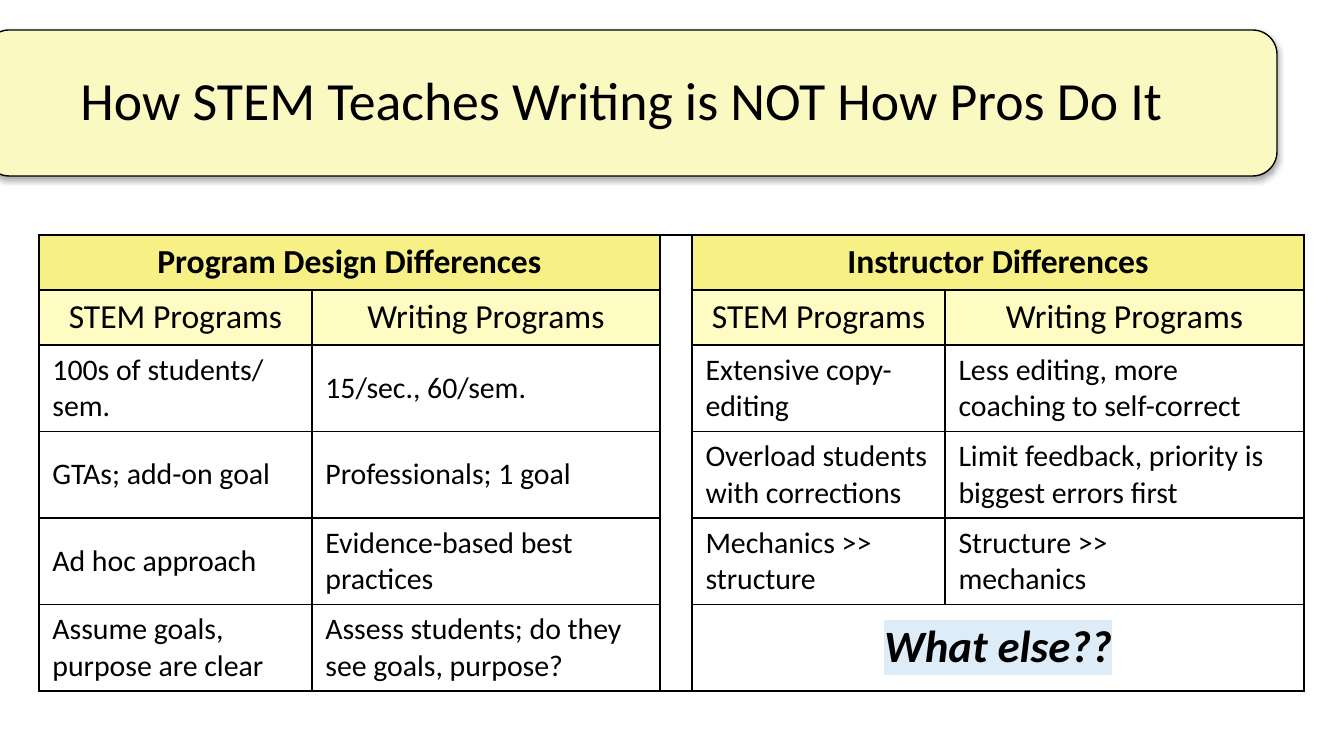
from lxml import etree
from pptx import Presentation
from pptx import util as u
from pptx.dml.color import RGBColor
from pptx.enum import shapes, text
from pptx.oxml.ns import qn

COLORS = {"ink": "000000", "banner": "FAF9C2", "group": "F7F085",
          "program": "FEFCC2", "highlight": "DEECF7"}
FONT = "Calibri"
COLUMNS = [273, 348, 32, 253, 359]
ROWS = [55, 55, 86, 86, 86, 86]
GAP = 2
PROGRAMS = ["STEM Programs", "Writing Programs"]
GROUPS = [
    (0, "Program Design Differences", [
        ("100s of students/ sem.", "15/sec., 60/sem."),
        ("GTAs; add-on goal", "Professionals; 1 goal"),
        ("Ad hoc approach", "Evidence-based best practices"),
        ("Assume goals, purpose are clear",
         "Assess students; do they see goals, purpose?")]),
    (3, "Instructor Differences", [
        ("Extensive copy-editing", "Less editing, more coaching to self-correct"),
        ("Overload students with corrections",
         "Limit feedback, priority is biggest errors first"),
        ("Mechanics >> structure", "Structure >>\nmechanics")]),
]


def px(length):
    """Turn pixels into EMU."""
    return u.Emu(round(length * 914400 / 134.4))


def color(name):
    """Look up a palette colour."""
    return RGBColor.from_string(COLORS[name])


def add_child(parent, tag, **attributes):
    """Append a DrawingML element."""
    child = etree.SubElement(parent, qn(tag))
    for key, value in attributes.items():
        child.set(key, str(value))
    return child


def style(para, size, bold=False, italic=False):
    """Set the font of a paragraph."""
    font = para.font
    font.name, font.size, font.bold, font.italic = FONT, u.Pt(size), bold, italic
    font.color.rgb = color("ink")


def add_shadow(shape):
    """Give a shape a soft shadow falling straight down."""
    shape.shadow.inherit = False
    effects = shape._element.spPr.find(qn("a:effectLst"))
    shadow = add_child(effects, "a:outerShdw", blurRad=u.Pt(3.1), dist=u.Pt(1.8),
                       dir=90 * 60000, algn="t", rotWithShape=0)
    tone = add_child(shadow, "a:srgbClr", val=COLORS["ink"])
    add_child(tone, "a:alpha", val=35000)


def add_header(page, left, top, width, height):
    """Place the banner with the title in front of it."""
    banner = page.shapes.add_shape(shapes.MSO_SHAPE.ROUNDED_RECTANGLE,
                                   px(left), px(top), px(width), px(height))
    banner.fill.solid()
    banner.fill.fore_color.rgb = color("banner")
    banner.line.color.rgb = color("ink")
    banner.line.width = u.Pt(0.75)
    add_shadow(banner)
    title = page.shapes.title
    title._element.addprevious(banner._element)
    title.left, title.top = px(left + 82), px(top - 4)
    title.width, title.height = px(width - 82), px(height)
    frame = title.text_frame
    frame.text = "How STEM Teaches Writing is NOT How Pros Do It"
    frame.vertical_anchor = text.MSO_ANCHOR.MIDDLE
    frame.auto_size = text.MSO_AUTO_SIZE.NONE
    frame.paragraphs[0].alignment = text.PP_ALIGN.LEFT
    style(frame.paragraphs[0], 28.8)


def add_borders(cell):
    """Draw a thin line on every side of a cell."""
    properties = cell._tc.get_or_add_tcPr()
    for place, side in enumerate("LRTB"):
        line = add_child(properties, f"a:ln{side}", w=u.Pt(1))
        add_child(add_child(line, "a:solidFill"), "a:srgbClr", val=COLORS["ink"])
        properties.insert(place, line)


def write_cell(cell, words, size=16, fill=None, centred=False, bold=False,
               italic=False):
    """Fill a cell with text and its background."""
    cell.text = words
    cell.vertical_anchor = text.MSO_ANCHOR.TOP if fill else text.MSO_ANCHOR.MIDDLE
    for para in cell.text_frame.paragraphs:
        para.alignment = text.PP_ALIGN.CENTER if centred else text.PP_ALIGN.LEFT
        style(para, size, bold, italic)
    if fill:
        cell.fill.solid()
        cell.fill.fore_color.rgb = color(fill)


def add_group(table, first, heading, rows):
    """Write a heading, its two programs and their contrasts."""
    table.cell(0, first).merge(table.cell(0, first + 1))
    write_cell(table.cell(0, first), heading, 18, "group", True, True)
    for offset, program in enumerate(PROGRAMS):
        write_cell(table.cell(1, first + offset), program, 18, "program", True)
        for number, contrast in enumerate(rows, 2):
            write_cell(table.cell(number, first + offset), contrast[offset])


def add_question(table, row, first):
    """Write the highlighted closing question across two columns."""
    cell = table.cell(row, first)
    cell.merge(table.cell(row, first + 1))
    write_cell(cell, "What else??", 24, centred=True, bold=True, italic=True)
    span = cell.text_frame.paragraphs[0].runs[0]
    mark = add_child(span._r.get_or_add_rPr(), "a:highlight")
    add_child(mark, "a:srgbClr", val=COLORS["highlight"])


def add_comparison(page, left, top):
    """Place the table that compares both kinds of program."""
    table = page.shapes.add_table(len(ROWS), len(COLUMNS), px(left), px(top),
                                  px(sum(COLUMNS)), px(sum(ROWS))).table
    table.first_row = table.horz_banding = False
    for column, width in zip(table.columns, COLUMNS):
        column.width = px(width)
    for row, height in zip(table.rows, ROWS):
        row.height = px(height)
    for cell in table.iter_cells():
        cell.fill.background()
    table.cell(0, GAP).merge(table.cell(len(ROWS) - 1, GAP))
    for group in GROUPS:
        add_group(table, *group)
    add_question(table, len(ROWS) - 1, GAP + 1)
    for cell in table.iter_cells():
        add_borders(cell)


def main():
    """Build and save the slide."""
    deck = Presentation()
    deck.slide_width, deck.slide_height = px(1344), px(756)
    page = deck.slides.add_slide(deck.slide_layouts[5])
    add_header(page, -15, 30, 1292, 146)
    add_comparison(page, 39, 235)
    deck.save("out.pptx")


if __name__ == "__main__":
    main()
